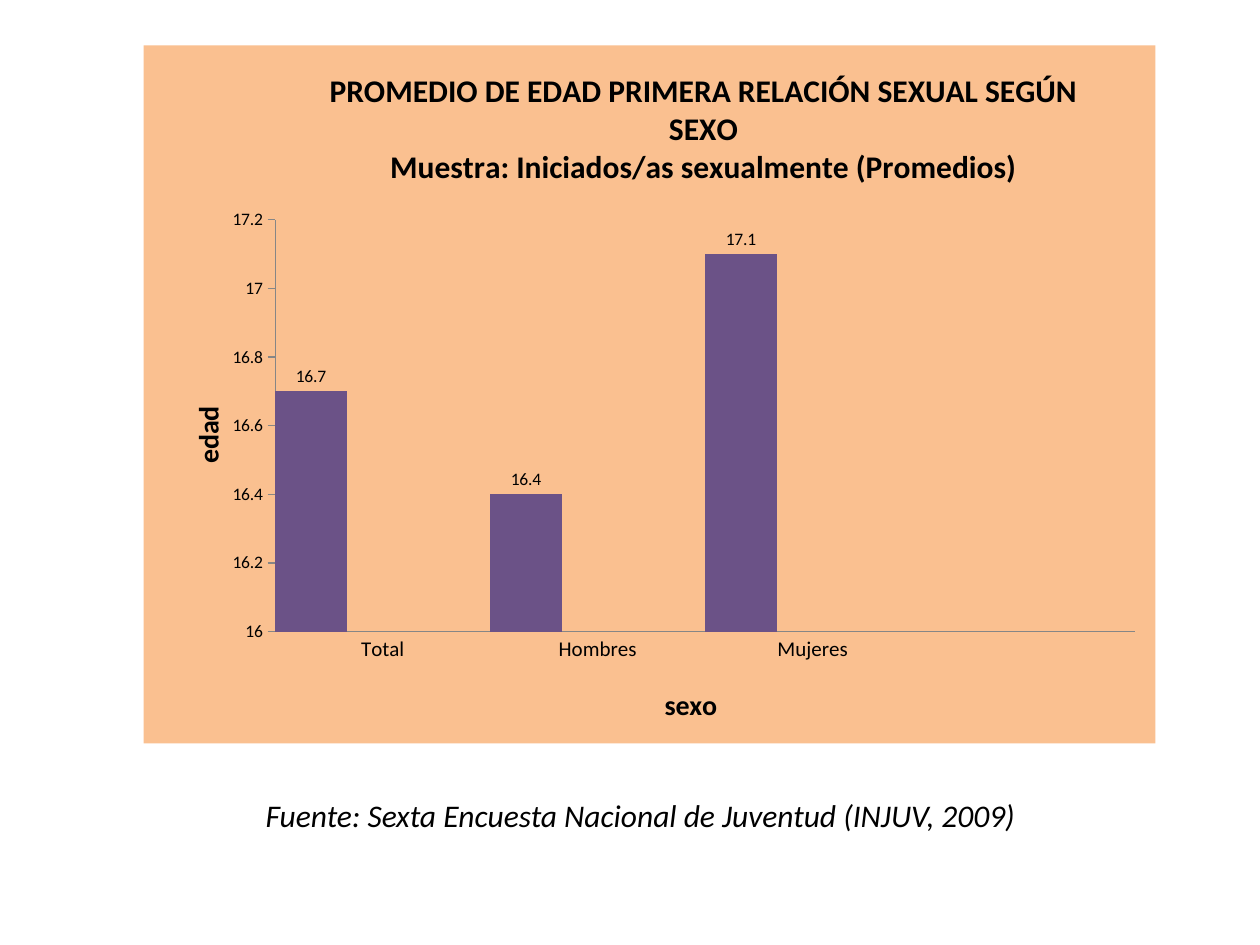
"""Build a slide with a column chart of average age by sex and its source line."""
from lxml.etree import SubElement, fromstring
from pptx import Presentation
from pptx.chart.data import CategoryChartData
from pptx.dml.color import RGBColor
from pptx.enum.chart import XL_CHART_TYPE, XL_LABEL_POSITION, XL_TICK_MARK
from pptx.enum.text import MSO_AUTO_SIZE
from pptx.oxml.ns import qn
from pptx.util import Inches, Pt

THEME = {
    "font": "Calibri", "text": "000000", "panel": "FAC090", "axis": "868686",
    "series": ["6B5287", "C0504D", "9BBB59"],
    "title": 18, "axis_title": 16, "category": 12, "label": 10, "source": 18,
}
TITLE = ["PROMEDIO DE EDAD PRIMERA RELACIÓN SEXUAL SEGÚN SEXO",
         "Muestra: Iniciados/as sexualmente (Promedios)"]
C_NS = "http://schemas.openxmlformats.org/drawingml/2006/chart"
A_NS = "http://schemas.openxmlformats.org/drawingml/2006/main"


def style(font, size, **extra):
    for k, v in {"name": THEME["font"], "size": Pt(THEME[size]), **extra}.items():
        setattr(font, k, v)
    font.color.rgb = RGBColor.from_string(THEME["text"])


def place(el, index, **box):
    for old in el.findall(qn("c:layout")):
        el.remove(old)
    layout = el.makeelement(qn("c:layout"))
    manual = SubElement(layout, qn("c:manualLayout"))
    if "w" in box:
        SubElement(manual, qn("c:layoutTarget")).set("val", "inner")
    for k in ("x", "y"):
        SubElement(manual, qn(f"c:{k}Mode")).set("val", "edge")
    for k, v in box.items():
        SubElement(manual, qn(f"c:{k}")).set("val", str(v))
    el.insert(index, layout)


prs = Presentation()
prs.slide_width, prs.slide_height = Inches(10), Inches(7.5)
s = prs.slides.add_slide(prs.slide_layouts[6])

data = CategoryChartData()
data.categories = ["Total", "Hombres", "Mujeres", ""]
for name, values in {"Series 1": (16.7, 16.4, 17.1, None),
                     "Series 2": (None,) * 4, "Series 3": (None,) * 4}.items():
    data.add_series(name, values)
chart = s.shapes.add_chart(XL_CHART_TYPE.COLUMN_CLUSTERED, Inches(1.14), Inches(0.36),
                           Inches(8.03), Inches(5.54), data).chart
chart.has_legend = False
style(chart.font, "label")

plot = chart.plots[0]
for k, v in {"gap_width": 0, "overlap": 0, "vary_by_categories": False}.items():
    setattr(plot, k, v)
for ser, color in zip(plot.series, THEME["series"]):
    ser.format.fill.solid()
    ser.format.fill.fore_color.rgb = RGBColor.from_string(color)
labels = plot.series[0].data_labels
labels.show_value = True
labels.position = XL_LABEL_POSITION.OUTSIDE_END
style(labels.font, "label")

val, cat = chart.value_axis, chart.category_axis
for k, v in {"minimum_scale": 16, "maximum_scale": 17.2, "major_unit": 0.2}.items():
    setattr(val, k, v)
for axis, name, size, tick, x, y in (
        (val, "edad", "label", XL_TICK_MARK.OUTSIDE, 0.04, 0.51),
        (cat, "sexo", "category", XL_TICK_MARK.NONE, 0.51, 0.91)):
    for k, v in {"has_major_gridlines": False, "major_tick_mark": tick,
                 "minor_tick_mark": XL_TICK_MARK.NONE}.items():
        setattr(axis, k, v)
    axis.format.line.color.rgb = RGBColor.from_string(THEME["axis"])
    style(axis.tick_labels.font, size)
    r = axis.axis_title.text_frame.paragraphs[0].add_run()
    r.text = name
    style(r.font, "axis_title", bold=True)
    place(axis.axis_title._element, 1, x=x, y=y)

tf = chart.chart_title.text_frame
for i, line in enumerate(TITLE):
    p = tf.add_paragraph() if i else tf.paragraphs[0]
    r = p.add_run()
    r.text = line
    style(r.font, "title", bold=True)
place(chart.chart_title._element, 1, x=0.18, y=0.03)

space = chart._chartSpace
area = space.chart.plotArea
place(area, 0, x=0.13, y=0.25, w=0.85, h=0.59)
for add in (area.append, space.chart.addnext):
    add(fromstring(
        f'<c:spPr xmlns:c="{C_NS}" xmlns:a="{A_NS}"><a:solidFill><a:srgbClr val="{THEME["panel"]}"/>'
        '</a:solidFill><a:ln><a:noFill/></a:ln></c:spPr>'))

tf = s.shapes.add_textbox(Inches(2.01), Inches(6.27), Inches(7.09), Inches(0.4)).text_frame
tf.word_wrap = True
tf.auto_size = MSO_AUTO_SIZE.SHAPE_TO_FIT_TEXT
r = tf.paragraphs[0].add_run()
r.text = "Fuente: Sexta Encuesta Nacional de Juventud (INJUV, 2009)"
style(r.font, "source", italic=True)

prs.save("out.pptx")
